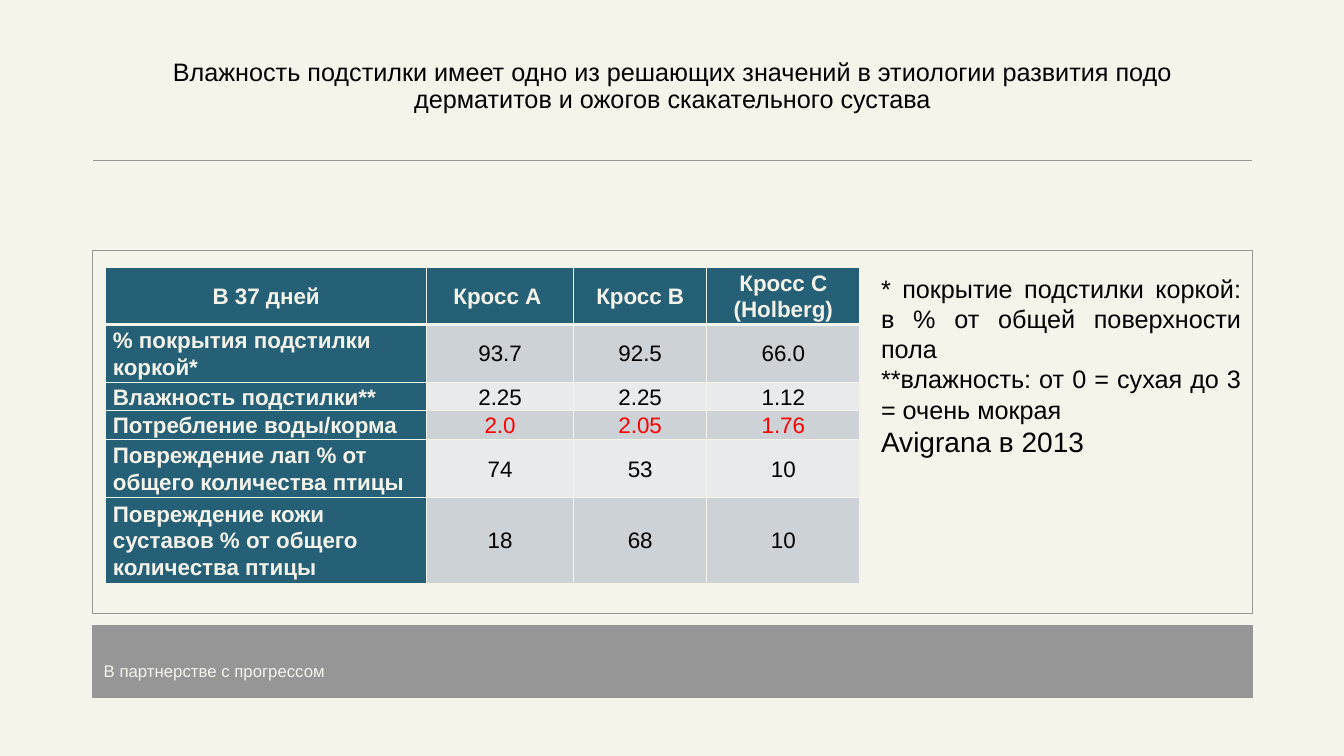
from lxml.etree import SubElement
from pptx import Presentation
from pptx.dml.color import RGBColor
from pptx.enum.shapes import MSO_CONNECTOR, MSO_SHAPE
from pptx.enum.text import MSO_ANCHOR, PP_ALIGN
from pptx.oxml import parse_xml
from pptx.oxml.ns import nsdecls, qn
from pptx.util import Pt

PX = 9144
CREAM = RGBColor(0xF5, 0xF4, 0xEB)
PALE = RGBColor(0xF4, 0xF3, 0xEA)
GRAY = RGBColor(0x96, 0x96, 0x96)
TEAL = RGBColor(0x26, 0x60, 0x76)
DARK = RGBColor(0xCD, 0xD2, 0xD6)
LIGHT = RGBColor(0xE8, 0xEA, 0xEC)
BLACK = RGBColor(0, 0, 0)
RED = RGBColor(0xFF, 0, 0)

deck = Presentation()
deck.slide_width = 1333 * PX
deck.slide_height = 750 * PX
slide = deck.slides.add_slide(deck.slide_layouts[6])
slide.background.fill.solid()
slide.background.fill.fore_color.rgb = CREAM
shapes = slide.shapes


def style(para, size, color, align=PP_ALIGN.LEFT, bold=False):
    para.alignment = align
    for run in para.runs:
        run.font.name = "Arial"
        run.font.size = Pt(size)
        run.font.bold = bold
        run.font.color.rgb = color


def add_text(left, top, width, height, lines):
    box = shapes.add_textbox(left * PX, top * PX, width * PX, height * PX)
    frame = box.text_frame
    frame.word_wrap = True
    frame.text = "\n".join(line[0] for line in lines)
    for para, line in zip(frame.paragraphs, lines):
        style(para, *line[1:])
    return frame


for left, top in [(92, 159), (675, 249)]:
    rule = shapes.add_connector(MSO_CONNECTOR.STRAIGHT, left * PX, top * PX, 1242 * PX, top * PX)
    rule.line.color.rgb = GRAY
    rule.line.width = Pt(0.75)
    SubElement(rule.element.spPr, qn("a:effectLst"))

for top, height, solid in [(621, 71, True), (249, 360, False)]:
    panel = shapes.add_shape(MSO_SHAPE.RECTANGLE, 92 * PX, top * PX, 1150 * PX, height * PX)
    panel.shadow.inherit = False
    panel.line.color.rgb = GRAY
    panel.line.width = Pt(0.75)
    if solid:
        panel.fill.solid()
        panel.fill.fore_color.rgb = GRAY
    else:
        panel.fill.background()

add_text(93, 651, 288, 30, [("В партнерстве с прогрессом", 12, CREAM)])

title = add_text(92, 40, 1150, 78, [(
    "Влажность подстилки имеет одно из решающих значений в этиологии развития подо "
    "дерматитов и ожогов скакательного сустава", 18, BLACK, PP_ALIGN.CENTER)])
title.vertical_anchor = MSO_ANCHOR.BOTTOM
title.paragraphs[0].line_spacing = 0.9

rows = [
    ("В 37 дней", "Кросс A ", "Кросс B", "Кросс C (Нolberg)"),
    ("% покрытия подстилки коркой*", "93.7", "92.5", "66.0"),
    ("Влажность подстилки**", "2.25", "2.25", "1.12"),
    ("Потребление воды/корма", "2.0", "2.05", "1.76"),
    ("Повреждение лап % от общего количества птицы", "74", "53", "10"),
    ("Повреждение кожи суставов % от общего количества птицы", "18", "68", "10"),
]
widths = [318, 146, 132, 152]
heights = [56, 56, 28, 28, 56, 84]
table = shapes.add_table(len(rows), len(widths), 105 * PX, 265 * PX,
                         sum(widths) * PX, sum(heights) * PX).table
for col, width in zip(table.columns, widths):
    col.width = width * PX
for row, height in zip(table.rows, heights):
    row.height = height * PX

for r, row in enumerate(rows):
    for c, text in enumerate(row):
        cell = table.cell(r, c)
        cell.text_frame.text = text
        cell.vertical_anchor = MSO_ANCHOR.MIDDLE
        cell.margin_left = cell.margin_right = 7 * PX
        cell.margin_top = cell.margin_bottom = 0
        head = r == 0 or c == 0
        color = PALE if head else RED if r == 3 else BLACK
        align = PP_ALIGN.LEFT if r and c == 0 else PP_ALIGN.CENTER
        para = cell.text_frame.paragraphs[0]
        style(para, 16, color, align, head)
        para.line_spacing = 1.07
        for side in "LRTB":
            thick = 3 if (r, side) in [(0, "B"), (1, "T")] else 1
            cell._tc.get_or_add_tcPr().append(parse_xml(
                f'<a:ln{side} {nsdecls("a")} w="{Pt(thick)}"><a:solidFill>'
                f'<a:srgbClr val="{PALE}"/></a:solidFill></a:ln{side}>'))
        cell.fill.solid()
        cell.fill.fore_color.rgb = TEAL if head else DARK if r % 2 else LIGHT

add_text(864, 266, 377, 195, [
    ("* покрытие подстилки коркой: в % от общей поверхности пола", 18, BLACK, PP_ALIGN.JUSTIFY),
    ("**влажность: от 0 = сухая до 3 = очень мокрая", 18, BLACK, PP_ALIGN.JUSTIFY),
    ("Avigrana в 2013", 20, BLACK),
])

deck.save("out.pptx")
